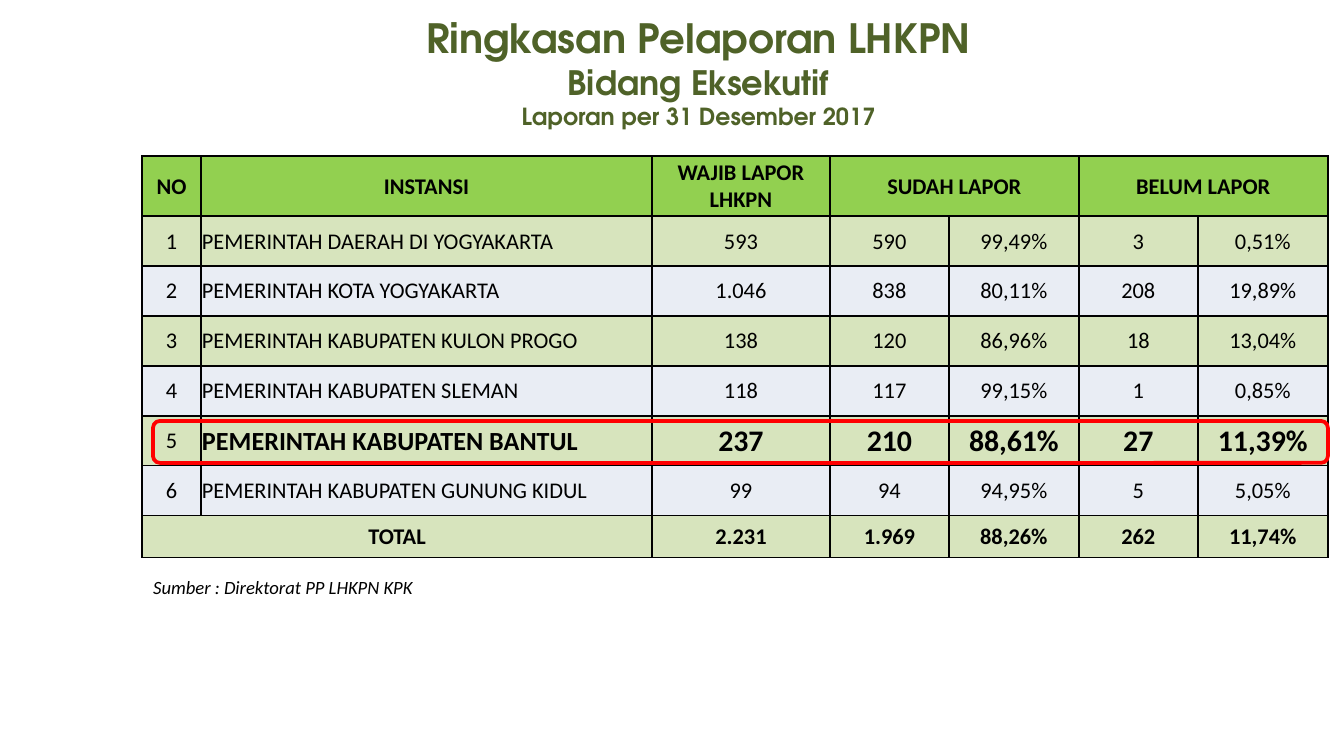
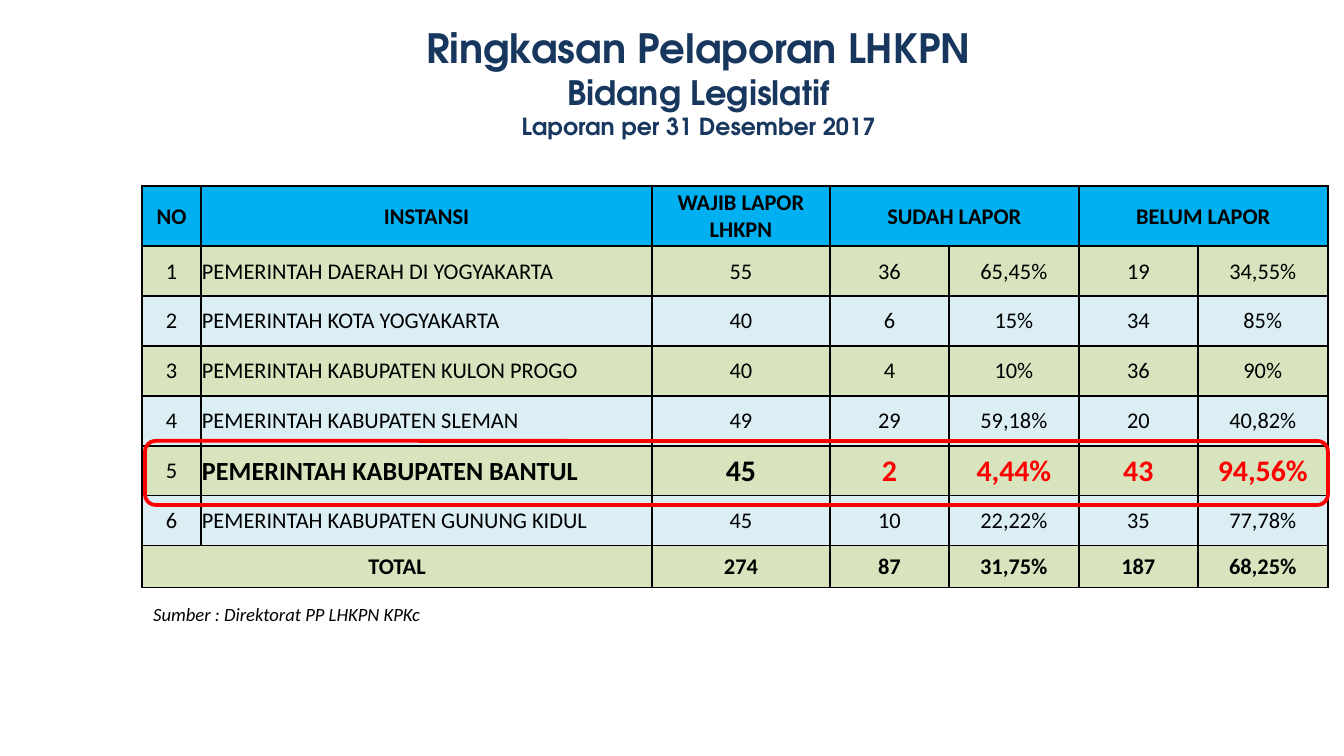
from itertools import cycle

from lxml import etree
from pptx import Presentation
from pptx.dml.color import RGBColor
from pptx.enum.shapes import MSO_SHAPE
from pptx.enum.text import MSO_ANCHOR, PP_ALIGN
from pptx.oxml.ns import qn
from pptx.util import Pt

LEFT, CENTER = PP_ALIGN.LEFT, PP_ALIGN.CENTER
TOP, MIDDLE = MSO_ANCHOR.TOP, MSO_ANCHOR.MIDDLE
ROUNDED = MSO_SHAPE.ROUNDED_RECTANGLE

BLACK = RGBColor(0x00, 0x00, 0x00)
RED = RGBColor(0xFF, 0x00, 0x00)
OLIVE = RGBColor(0x4F, 0x62, 0x28)
NAVY = RGBColor(0x17, 0x37, 0x5E)
LIME = RGBColor(0x92, 0xD0, 0x50)
SKY = RGBColor(0x00, 0xB0, 0xF0)
SAGE = RGBColor(0xD7, 0xE4, 0xBD)
LAVENDER = RGBColor(0xE9, 0xED, 0xF4)
ICE = RGBColor(0xDB, 0xEE, 0xF4)

BODY_FONT, TITLE_FONT = "Calibri", "TeX Gyre Adventor"
TITLE_SIZES = (21.6, 18, 12.6)

HEADER = ["NO", "INSTANSI", "WAJIB LAPOR\nLHKPN", "SUDAH LAPOR", "", "BELUM LAPOR", ""]
AGENCIES = ["DAERAH DI YOGYAKARTA", "KOTA YOGYAKARTA", "KABUPATEN KULON PROGO",
            "KABUPATEN SLEMAN", "KABUPATEN BANTUL", "KABUPATEN GUNUNG KIDUL"]
MERGES = [(0, 3), (0, 5), (7, 0)]
BANTUL_ROW, TOTAL_ROW = 5, 7

REPORTS = [
    dict(
        field="Eksekutif", source="Sumber : Direktorat PP LHKPN KPK",
        title_color=OLIVE, header_fill=LIME, even_fill=LAVENDER, bantul_color=BLACK,
        title_top=19, table_top=156, source_box=(140, 569, 289, 36),
        highlight=(153, 421, 1175, 42),
        figures=[
            ("593", "590", "99,49%", "3", "0,51%"),
            ("1.046", "838", "80,11%", "208", "19,89%"),
            ("138", "120", "86,96%", "18", "13,04%"),
            ("118", "117", "99,15%", "1", "0,85%"),
            ("237", "210", "88,61%", "27", "11,39%"),
            ("99", "94", "94,95%", "5", "5,05%"),
            ("2.231", "1.969", "88,26%", "262", "11,74%"),
        ]),
    dict(
        field="Legislatif", source="Sumber : Direktorat PP LHKPN KPKc",
        title_color=NAVY, header_fill=SKY, even_fill=ICE, bantul_color=RED,
        title_top=29, table_top=186, source_box=(140, 596, 297, 36),
        highlight=(145, 441, 1183, 64),
        figures=[
            ("55", "36", "65,45%", "19", "34,55%"),
            ("40", "6", "15%", "34", "85%"),
            ("40", "4", "10%", "36", "90%"),
            ("49", "29", "59,18%", "20", "40,82%"),
            ("45", "2", "4,44%", "43", "94,56%"),
            ("45", "10", "22,22%", "35", "77,78%"),
            ("274", "87", "31,75%", "187", "68,25%"),
        ]),
]

TABLE_LEFT = 142
COLUMNS = [59, 451, 178, 119, 130, 119, 130]
ROWS = [60] + [50] * len(AGENCIES) + [42]


def px(*lengths):
    """Turn pixels (134.4 to the inch) into EMU."""
    return [round(length * 914400 / 134.4) for length in lengths]


def write(frame, text, sizes=(12,), font=BODY_FONT, color=BLACK, bold=False,
          italic=False, align=LEFT):
    """Fill one paragraph; sizes are taken in turn by the lines of the text."""
    para = frame.paragraphs[0]
    para.alignment = align
    for number, (line, size) in enumerate(zip(text.split("\n"), cycle(sizes))):
        if number:
            para.add_line_break()
        span = para.add_run()
        span.text = line
        span.font.name, span.font.size = font, Pt(size)
        span.font.bold, span.font.italic = bold, italic
        span.font.color.rgb = color


def add_text(page, place, text, wrap=True, anchor=TOP, **style):
    frame = page.shapes.add_textbox(*px(*place)).text_frame
    frame.word_wrap = wrap
    frame.vertical_anchor = anchor
    write(frame, text, **style)


def style_cell(cell, fill):
    cell.margin_left, cell.margin_right, cell.margin_top, cell.margin_bottom = px(1, 1, 1, 0)
    cell.vertical_anchor = MIDDLE
    properties = cell._tc.get_or_add_tcPr()
    for side in ("a:lnL", "a:lnR", "a:lnT", "a:lnB"):
        border = etree.SubElement(properties, qn(side), w=str(Pt(1)))
        paint = etree.SubElement(border, qn("a:solidFill"))
        etree.SubElement(paint, qn("a:srgbClr"), val=str(BLACK))
    cell.fill.solid()
    cell.fill.fore_color.rgb = fill


def cell_style(row, column, bantul_color):
    style = dict(bold=row in (0, TOTAL_ROW),
                 align=LEFT if column == 1 and row else CENTER)
    if row == BANTUL_ROW and column:
        style.update(bold=True, sizes=(14,) if column == 1 else (16,),
                     color=bantul_color if column > 2 else BLACK)
    return style


def add_report_table(page, report):
    names = [(str(number), "PEMERINTAH " + agency)
             for number, agency in enumerate(AGENCIES, 1)] + [("TOTAL", "")]
    content = [HEADER] + [name + figures for name, figures in zip(names, report["figures"])]
    place = px(TABLE_LEFT, report["table_top"], sum(COLUMNS), sum(ROWS))
    table = page.shapes.add_table(len(ROWS), len(COLUMNS), *place).table
    table.first_row = table.horz_banding = False
    for column, width in zip(table.columns, px(*COLUMNS)):
        column.width = width
    for row, height in zip(table.rows, px(*ROWS)):
        row.height = height
    for row, column in MERGES:
        table.cell(row, column).merge(table.cell(row, column + 1))
    for row, texts in enumerate(content):
        fill = SAGE if row % 2 else report["even_fill"]
        if row == 0:
            fill = report["header_fill"]
        for column, text in enumerate(texts):
            cell = table.cell(row, column)
            style_cell(cell, fill)
            if text:
                write(cell.text_frame, text, **cell_style(row, column, report["bantul_color"]))


def add_highlight(page, place):
    frame = page.shapes.add_shape(ROUNDED, *px(*place))
    frame.shadow.inherit = False
    frame.fill.background()
    frame.line.color.rgb = RED
    frame.line.width = Pt(2)


def build_page(deck, report):
    page = deck.slides.add_slide(deck.slide_layouts[6])
    title = f"Ringkasan Pelaporan LHKPN\nBidang {report['field']}\nLaporan per 31 Desember 2017"
    add_text(page, (270, report["title_top"], 857, 106), title, anchor=MIDDLE,
             sizes=TITLE_SIZES, font=TITLE_FONT, color=report["title_color"],
             bold=True, align=CENTER)
    add_report_table(page, report)
    add_highlight(page, report["highlight"])
    add_text(page, report["source_box"], report["source"], wrap=False,
             sizes=(10,), italic=True)


def main():
    deck = Presentation()
    deck.slide_width, deck.slide_height = px(1344, 756)
    for report in REPORTS:
        build_page(deck, report)
    deck.save("out.pptx")


if __name__ == "__main__":
    main()
